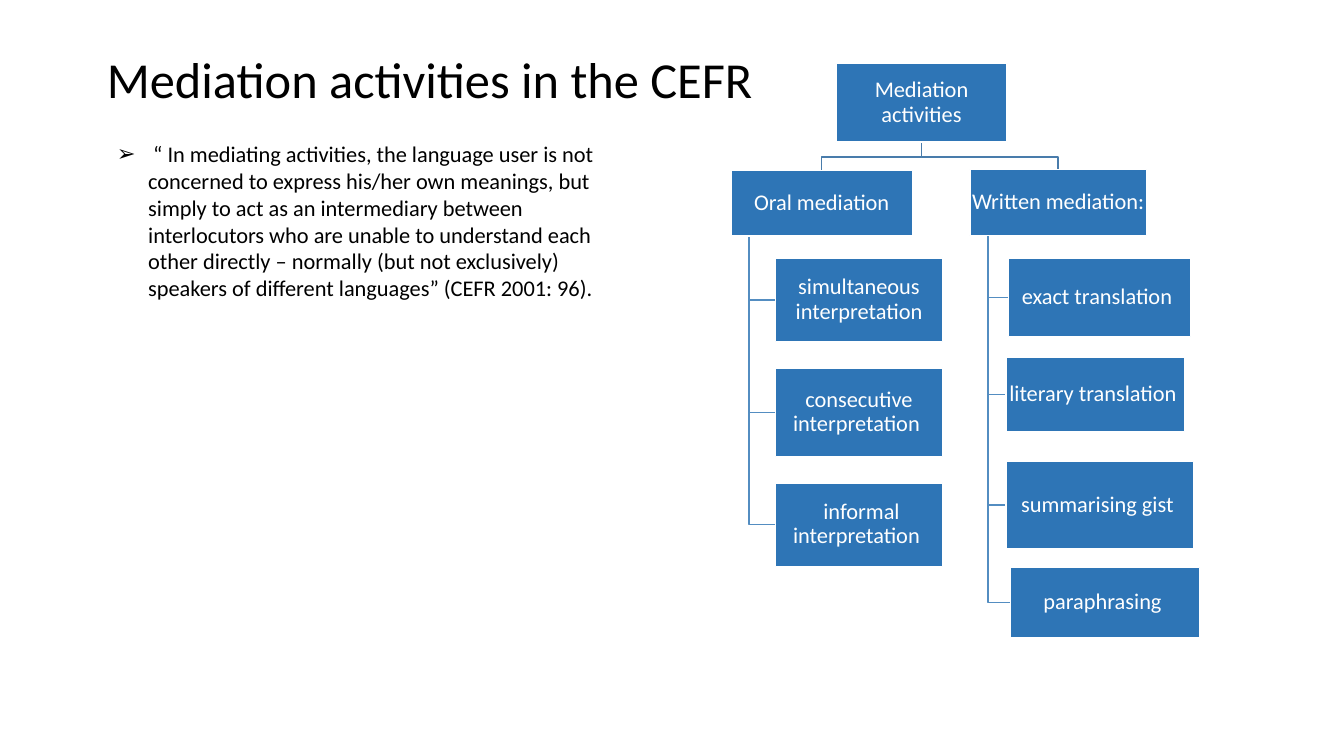
import pptx
import pptx.dml.color
import pptx.enum.shapes
import pptx.enum.text
import pptx.oxml
import pptx.oxml.ns
import pptx.util
from pptx.util import Inches

RGBColor = pptx.dml.color.RGBColor
BLACK = RGBColor(0x00, 0x00, 0x00)
WHITE = RGBColor(0xFF, 0xFF, 0xFF)
BOX_BLUE = RGBColor(0x2E, 0x75, 0xB6)
ROOT_LINE = RGBColor(0x49, 0x7C, 0xAB)
BRANCH_LINE = RGBColor(0x53, 0x8D, 0xC1)
FONT = "Calibri"

TITLE = "Mediation activities in the CEFR"
QUOTE = (
    " “ In mediating activities, the language user is not concerned to express "
    "his/her own meanings, but simply to act as an intermediary between "
    "interlocutors who are unable to understand each other directly – normally "
    "(but not exclusively) speakers of different languages” (CEFR 2001: 96)."
)

# Boxes are (label, left, top, width, height) in inches:
# headings relative to the tree, activities relative to their heading.
ROOT = ("Mediation activities", 1.04, 0, 1.7, 0.78)
BRANCHES = [
    (("Oral mediation", 0, 1.06, 1.8, 0.65), [
        ("simultaneous interpretation", 0.44, 0.87, 1.66, 0.83),
        ("consecutive interpretation ", 0.44, 1.96, 1.66, 0.88),
        (" informal interpretation ", 0.44, 3.1, 1.66, 0.83),
    ]),
    (("Written mediation:", 2.37, 1.05, 1.75, 0.66), [
        ("exact translation ", 0.38, 0.88, 1.81, 0.78),
        ("literary translation ", 0.36, 1.87, 1.77, 0.73),
        ("summarising gist ", 0.36, 2.9, 1.86, 0.86),
        ("paraphrasing ", 0.4, 3.95, 1.88, 0.7),
    ]),
]
SPINE_INSET = 0.18
ROOT_DROP = 0.15


def place(shape, left, top, width, height):
    shape.left, shape.top = Inches(left), Inches(top)
    shape.width, shape.height = Inches(width), Inches(height)


def format_text(shape, text, size, color, alignment, anchor, line_spacing):
    frame = shape.text_frame
    frame.text = text
    frame.word_wrap = True
    frame.auto_size = pptx.enum.text.MSO_AUTO_SIZE.NONE
    frame.vertical_anchor = anchor
    paragraph = frame.paragraphs[0]
    paragraph.alignment = alignment
    paragraph.line_spacing = line_spacing
    paragraph.space_before = pptx.util.Pt(0)
    for run in paragraph.runs:
        run.font.name = FONT
        run.font.size = pptx.util.Pt(size)
        run.font.color.rgb = color
    return paragraph


def add_title(slide, left, top, width, height):
    title = slide.shapes.title
    place(title, left, top, width, height)
    format_text(title, TITLE, 36, BLACK, pptx.enum.text.PP_ALIGN.LEFT,
                pptx.enum.text.MSO_ANCHOR.BOTTOM, 0.9)


def add_quote(slide, left, top, width, height):
    body = slide.placeholders[1]
    place(body, left, top, width, height)
    paragraph = format_text(body, QUOTE, 16, BLACK, pptx.enum.text.PP_ALIGN.LEFT,
                            pptx.enum.text.MSO_ANCHOR.TOP, 1.0)
    properties = paragraph._p.get_or_add_pPr()
    properties.set("marL", str(Inches(0.31)))
    properties.set("indent", str(-Inches(0.31)))
    namespace = pptx.oxml.ns.nsdecls("a")
    properties.append(pptx.oxml.parse_xml(f'<a:buFont {namespace} typeface="Wingdings"/>'))
    properties.append(pptx.oxml.parse_xml(f'<a:buChar {namespace} char="➢"/>'))
    # An arrow given as a Unicode character needs a text font.
    properties.find(pptx.oxml.ns.qn("a:buFont")).set("typeface", "Arial")


def add_line(slide, points, color):
    """Draw an open path through points given in inches."""
    (start_x, start_y), *others = [(Inches(x), Inches(y)) for x, y in points]
    builder = slide.shapes.build_freeform(start_x, start_y)
    builder.add_line_segments(others, close=False)
    line = builder.convert_to_shape()
    line.shadow.inherit = False
    line.fill.background()
    line.line.color.rgb = color
    line.line.width = pptx.util.Pt(1)


def add_box(slide, label, left, top, width, height):
    box = slide.shapes.add_shape(
        pptx.enum.shapes.MSO_SHAPE.RECTANGLE,
        Inches(left), Inches(top), Inches(width), Inches(height))
    box.shadow.inherit = False
    box.fill.solid()
    box.fill.fore_color.rgb = BOX_BLUE
    box.line.color.rgb = WHITE
    box.line.width = pptx.util.Pt(1)
    frame = box.text_frame
    frame.margin_left = frame.margin_right = Inches(0.01)
    frame.margin_top = frame.margin_bottom = Inches(0.01)
    format_text(box, label, 16, WHITE, pptx.enum.text.PP_ALIGN.CENTER,
                pptx.enum.text.MSO_ANCHOR.MIDDLE, 0.9)


def add_branch(slide, heading, activities, left, top):
    """Draw a heading with its activities hanging from a spine below it."""
    label, _, _, width, height = heading
    spine = left + SPINE_INSET
    for name, offset_x, offset_y, box_width, box_height in activities:
        box_left, box_top = left + offset_x, top + offset_y
        middle = box_top + box_height / 2
        add_line(slide, [(spine, top + height), (spine, middle), (box_left, middle)],
                 BRANCH_LINE)
        add_box(slide, name, box_left, box_top, box_width, box_height)
    add_box(slide, label, left, top, width, height)


def add_tree(slide, left, top):
    label, root_x, root_y, width, height = ROOT
    center, bottom = left + root_x + width / 2, top + root_y + height
    for heading, activities in BRANCHES:
        heading_left, heading_top = left + heading[1], top + heading[2]
        heading_center = heading_left + heading[3] / 2
        bend = bottom + ROOT_DROP
        add_line(slide, [(center, bottom), (center, bend), (heading_center, bend),
                         (heading_center, heading_top)], ROOT_LINE)
        add_branch(slide, heading, activities, heading_left, heading_top)
    add_box(slide, label, left + root_x, top + root_y, width, height)


def main():
    presentation = pptx.Presentation()
    presentation.slide_width = Inches(13.33)
    presentation.slide_height = Inches(7.5)
    slide = presentation.slides.add_slide(presentation.slide_layouts[0])
    add_title(slide, 0.96, 0.24, 10.63, 0.9)
    add_quote(slide, 1.06, 1.34, 5.29, 4.98)
    add_tree(slide, 7.25, 0.63)
    presentation.save("out.pptx")


if __name__ == "__main__":
    main()
